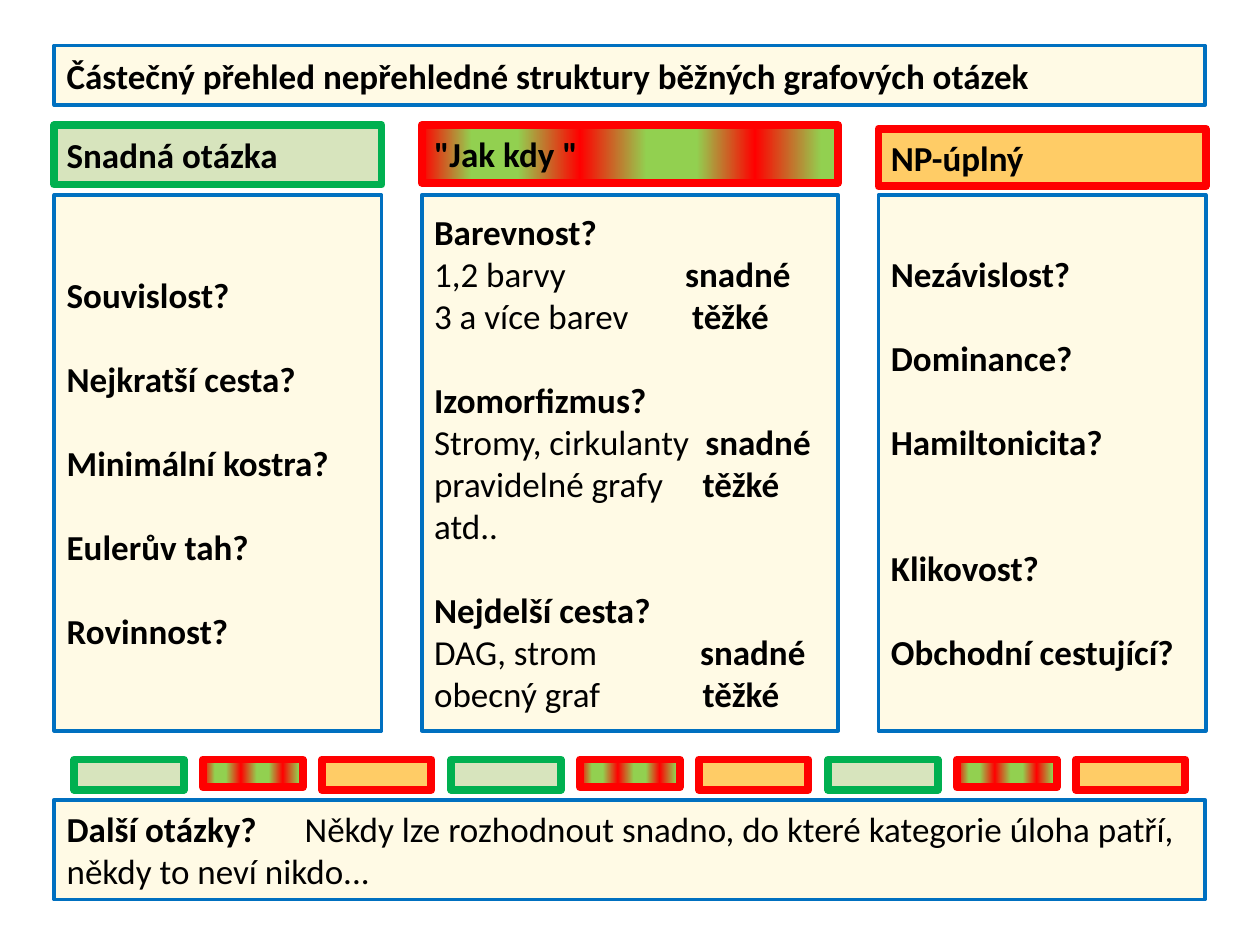
from lxml.etree import SubElement
from pptx import Presentation
from pptx.dml.color import RGBColor
from pptx.enum.shapes import MSO_SHAPE as Kind
from pptx.enum.text import MSO_ANCHOR as Anchor, PP_ALIGN as Align
from pptx.oxml.ns import qn
from pptx.util import Pt

CREAM, BLUE, GREEN, RED = "FFFAE5", "0070C0", "00B050", "FF0000"
LIME, SAGE, GOLD = "92D050", "D7E4BD", "FFCC66"
STOPS = [(0, RED), (12, LIME), (23, LIME), (38, RED),
         (54, LIME), (66, LIME), (80, RED), (96, LIME)]


def color(code):
    return RGBColor.from_string(code)


def box(left, top, width, height, fill, edge, weight, rows=()):
    shape = slide.shapes.add_shape(
        Kind.RECTANGLE, Pt(left), Pt(top), Pt(width), Pt(height))
    shape.shadow.inherit = False
    shape.line.color.rgb = color(edge)
    shape.line.width = Pt(weight)
    if fill == "mix":
        shape.fill.gradient()
        shape.fill.gradient_angle = 0
        stops = shape._element.spPr.find(".//" + qn("a:gsLst"))
        for old in list(stops):
            stops.remove(old)
        for place, code in STOPS:
            stop = SubElement(stops, qn("a:gs"), pos=str(place * 1000))
            SubElement(stop, qn("a:srgbClr"), val=code)
    else:
        shape.fill.solid()
        shape.fill.fore_color.rgb = color(fill)
    frame = shape.text_frame
    frame.word_wrap = True
    frame.vertical_anchor = Anchor.MIDDLE
    for num, (gap, tab, *parts) in enumerate(rows):
        para = frame.paragraphs[0] if num == 0 else frame.add_paragraph()
        para.alignment = Align.LEFT
        if gap:
            para.space_before = Pt(gap)
        if tab:
            tabs = SubElement(para._p.get_or_add_pPr(), qn("a:tabLst"))
            SubElement(tabs, qn("a:tab"), pos=str(Pt(tab)), algn="l")
        font = para.font
        font.name, font.size = "Calibri", Pt(20)
        font.color.rgb = color("000000")
        if len(parts) == 1:
            font.bold = parts[0][1]
        for text, bold in parts:
            run = para.add_run()
            run.text = text
            if len(parts) > 1:
                run.font.bold = bold


deck = Presentation()
deck.slide_width, deck.slide_height = Pt(720), Pt(540)
slide = deck.slides.add_slide(deck.slide_layouts[6])

title = "Částečný přehled nepřehledné struktury běžných grafových otázek"
box(31, 26, 657.5, 34, CREAM, BLUE, 2.25, [(0, 0, (title, True))])

easy = [(0, "Souvislost?"), (24, "Nejkratší cesta?"), (24, "Minimální kostra?"),
        (24, "Eulerův tah?"), (24, "Rovinnost?")]
hard = [(0, "Nezávislost?"), (24, "Dominance?"), (24, "Hamiltonicita?"),
        (48, "Klikovost?"), (24, "Obchodní cestující?")]
mixed = [
    (0, 0, ("Barevnost?", True)),
    (0, 143.5, ("1,2 barvy", False), ("\tsnadné", True)),
    (0, 147.5, ("3 a více barev", False), ("\ttěžké", True)),
    (24, 0, ("Izomorfizmus?", True)),
    (0, 155, ("Stromy, cirkulanty", False), ("\tsnadné", True)),
    (0, 153.5, ("pravidelné grafy", False), ("\ttěžké", True)),
    (0, 0, ("atd..", False)),
    (24, 0, ("Nejdelší cesta?", True)),
    (0, 152, ("DAG, strom", False), ("\tsnadné", True)),
    (0, 153.5, ("obecný graf", False), ("\ttěžké", True)),
]
easy, hard = [[(gap, 0, (text, True)) for gap, text in rows]
              for rows in (easy, hard)]

groups = [
    (31, 187, 71.5, 34, SAGE, GREEN, "Snadná otázka", easy),
    (241, 238, 71.5, 33, "mix", RED, '"Jak kdy "', mixed),
    (502, 187, 73.5, 33, GOLD, RED, "NP-úplný", hard),
]
for left, width, top, height, fill, edge, head, rows in groups:
    box(left, 111.5, width, 306, CREAM, BLUE, 2.25, rows)
    box(left, top, width, height, fill, edge, 4.5, [(0, 0, (head, True))])

chips = [(42.5, 62.5, 17.5, SAGE, GREEN), (116, 57, 16, "mix", RED),
         (184, 62.5, 17.5, GOLD, RED)]
for turn in range(3):
    for left, width, height, fill, edge in chips:
        box(left + turn * 215.4, 434, width, height, fill, edge, 4.5)

box(31, 457, 657.5, 57, CREAM, BLUE, 2.25, [
    (0, 136, ("Další otázky?", True),
     ("\tNěkdy lze rozhodnout snadno, do které kategorie úloha patří,", False)),
    (0, 0, ("někdy to neví nikdo...", False)),
])

deck.save("out.pptx")
